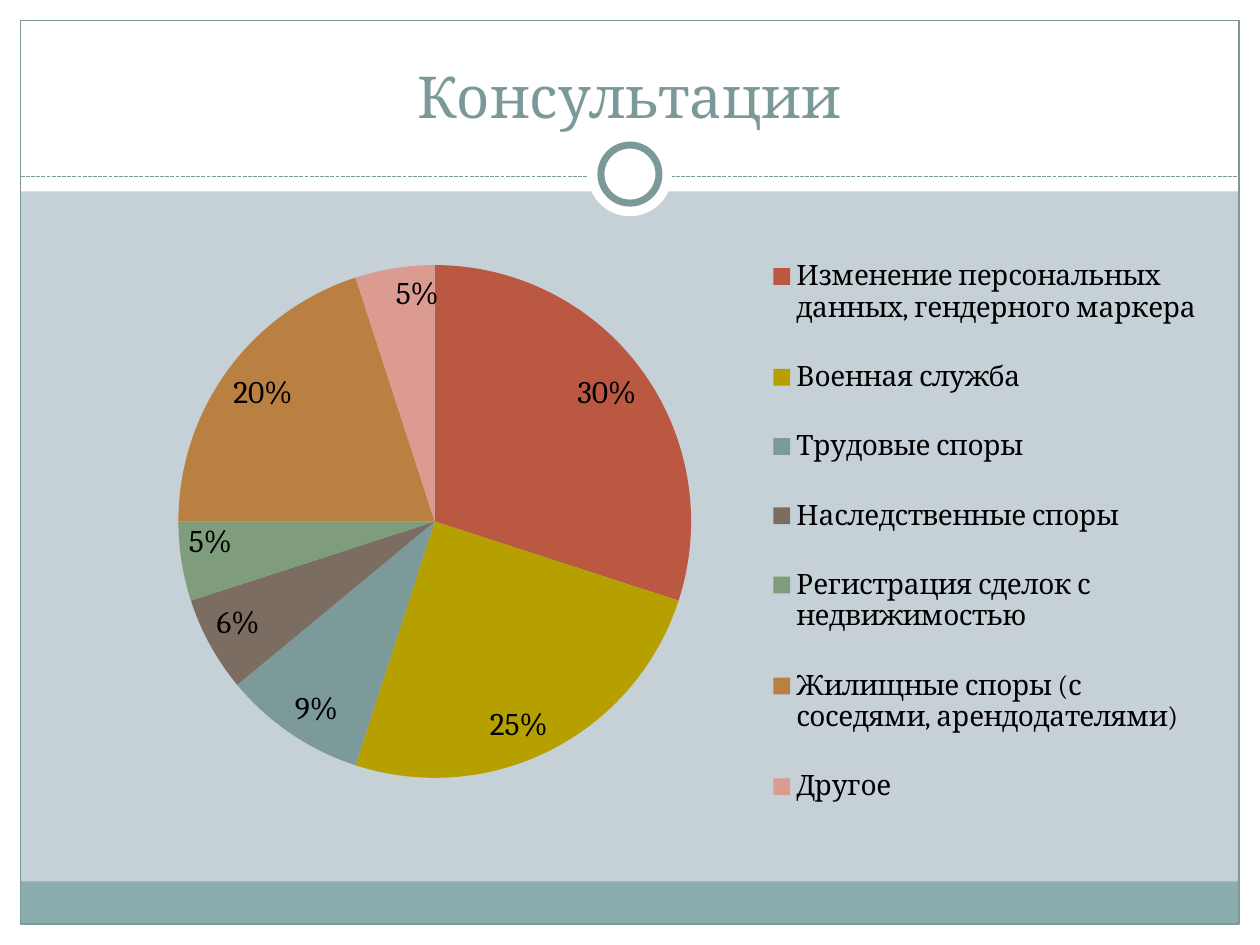
import pptx
import pptx.chart.data
import pptx.dml.color
import pptx.enum.chart
import pptx.enum.dml
import pptx.enum.shapes
import pptx.enum.text
import pptx.oxml
import pptx.oxml.ns
import pptx.util
from pptx.util import Cm

# Content
TITLE = "Консультации"
CONSULTATIONS = [  # topic, share, slice colour
    ("Изменение персональных данных, гендерного маркера", 0.30, "BA5841"),
    ("Военная служба", 0.25, "B5A000"),
    ("Трудовые споры", 0.09, "7D9A9B"),
    ("Наследственные споры", 0.06, "7C6D63"),
    ("Регистрация сделок с недвижимостью", 0.05, "7F9D7C"),
    ("Жилищные споры (с соседями, арендодателями)", 0.20, "BA8041"),
    ("Другое", 0.05, "DC9B91"),
]
THEME = {
    "font": "Cambria", "title_size": 33, "label_size": 18, "legend_size": 16,
    "back": "C5D1D7", "paper": "FFFFFF", "band": "8CADAE",
    "accent": "7C999A", "text": "000000",
}

# Slide geometry in centimetres
WIDTH, HEIGHT = 25.4, 19.05
MARGIN = 0.42
HEADER, BAND = 3.86, 0.86
RULE_Y = 3.56
RING_Y = 3.51
PLOT = (0.061, 0.087, 0.549, 0.814)  # fractions of the chart
LEGEND = (0.62, 0.02, 0.37, 0.98)

SHAPE = pptx.enum.shapes.MSO_SHAPE


def rgb(name):
    return pptx.dml.color.RGBColor.from_string(THEME.get(name, name))


def style_font(font, size, color):
    font.name, font.size = THEME["font"], pptx.util.Pt(THEME[size])
    font.color.rgb = rgb(color)


def add_box(kind, x, y, w, h, fill=None, line=None, weight=0.75):
    sp = s.shapes.add_shape(kind, Cm(x), Cm(y), Cm(w), Cm(h))
    sp.shadow.inherit = False
    if fill:
        sp.fill.solid()
        sp.fill.fore_color.rgb = rgb(fill)
    else:
        sp.fill.background()
    if line:
        sp.line.color.rgb = rgb(line)
        sp.line.width = pptx.util.Pt(weight)
    else:
        sp.line.fill.background()
    return sp


def add_circle(diameter, **style):
    add_box(SHAPE.OVAL, (WIDTH - diameter) / 2, RING_Y - diameter / 2,
            diameter, diameter, **style)


def manual_layout(box, inner=False):
    x, y, w, h = box
    target = '<c:layoutTarget val="inner"/>' if inner else ""
    return pptx.oxml.parse_xml(
        f'<c:layout {pptx.oxml.ns.nsdecls("c")}><c:manualLayout>{target}'
        '<c:xMode val="edge"/><c:yMode val="edge"/>'
        f'<c:x val="{x}"/><c:y val="{y}"/><c:w val="{w}"/><c:h val="{h}"/>'
        '</c:manualLayout></c:layout>')


def set_layout(parent, layout, index):
    for old in parent.findall(pptx.oxml.ns.qn("c:layout")):
        parent.remove(old)
    parent.insert(index, layout)


prs = pptx.Presentation()
prs.slide_width, prs.slide_height = Cm(WIDTH), Cm(HEIGHT)
s = prs.slides.add_slide(prs.slide_layouts[6])
s.background.fill.solid()
s.background.fill.fore_color.rgb = rgb("back")

# White margins and header, footer band, frame
inner_w, inner_h = WIDTH - 2 * MARGIN, HEIGHT - 2 * MARGIN
for box in [(0, HEIGHT - MARGIN, WIDTH, MARGIN), (0, 0, WIDTH, HEADER),
            (0, 0, MARGIN, HEIGHT), (WIDTH - MARGIN, 0, MARGIN, HEIGHT)]:
    add_box(SHAPE.RECTANGLE, *box, fill="paper")
add_box(SHAPE.RECTANGLE, MARGIN, HEIGHT - MARGIN - BAND, inner_w, BAND, fill="band")
add_box(SHAPE.RECTANGLE, MARGIN, MARGIN, inner_w, inner_h, line="accent")

# Dashed rule with the ring over it
rule = s.shapes.add_connector(
    pptx.enum.shapes.MSO_CONNECTOR.STRAIGHT,
    Cm(MARGIN), Cm(RULE_Y), Cm(WIDTH - MARGIN), Cm(RULE_Y))
rule.line.color.rgb = rgb("accent")
rule.line.width = pptx.util.Pt(0.75)
rule.line.dash_style = pptx.enum.dml.MSO_LINE.SQUARE_DOT
rule._element.spPr.append(
    pptx.oxml.parse_xml(f'<a:effectLst {pptx.oxml.ns.nsdecls("a")}/>'))
add_circle(1.7, fill="paper")
add_circle(1.17, fill="paper", line="accent", weight=4)

# Title
tf = s.shapes.add_textbox(Cm(0.84), Cm(0.64), Cm(23.7), Cm(2.11)).text_frame
tf.word_wrap = True
tf.vertical_anchor = pptx.enum.text.MSO_ANCHOR.BOTTOM
tf.text = TITLE
p = tf.paragraphs[0]
p.alignment = pptx.enum.text.PP_ALIGN.CENTER
style_font(p.runs[0].font, "title_size", "accent")

# Pie chart
topics, shares, colors = zip(*CONSULTATIONS)
data = pptx.chart.data.CategoryChartData(number_format="0%")
data.categories = topics
data.add_series("Series 1", shares)
chart = s.shapes.add_chart(
    pptx.enum.chart.XL_CHART_TYPE.PIE,
    Cm(0.84), Cm(4.24), Cm(23.62), Cm(12.7), data).chart
chart.has_title = False
style_font(chart.font, "label_size", "text")
plot = chart.plots[0]
plot.vary_by_categories = True
for i, color in enumerate(colors):
    fmt = plot.series[0].points[i].format
    fmt.fill.solid()
    fmt.fill.fore_color.rgb = rgb(color)
    fmt.line.fill.background()

# Slice labels
plot.has_data_labels = True
labels = plot.data_labels
labels.show_value = True
labels.show_percentage = False
labels.number_format, labels.number_format_is_linked = "0%", False
labels.position = pptx.enum.chart.XL_LABEL_POSITION.INSIDE_END
style_font(labels.font, "label_size", "text")

# Legend and placing of the chart parts
chart.has_legend = True
legend = chart.legend
legend.position = pptx.enum.chart.XL_LEGEND_POSITION.RIGHT
legend.include_in_layout = False
style_font(legend.font, "legend_size", "text")
set_layout(legend._element, manual_layout(LEGEND), 1)
set_layout(chart._chartSpace.chart.plotArea, manual_layout(PLOT, inner=True), 0)

prs.save("out.pptx")
